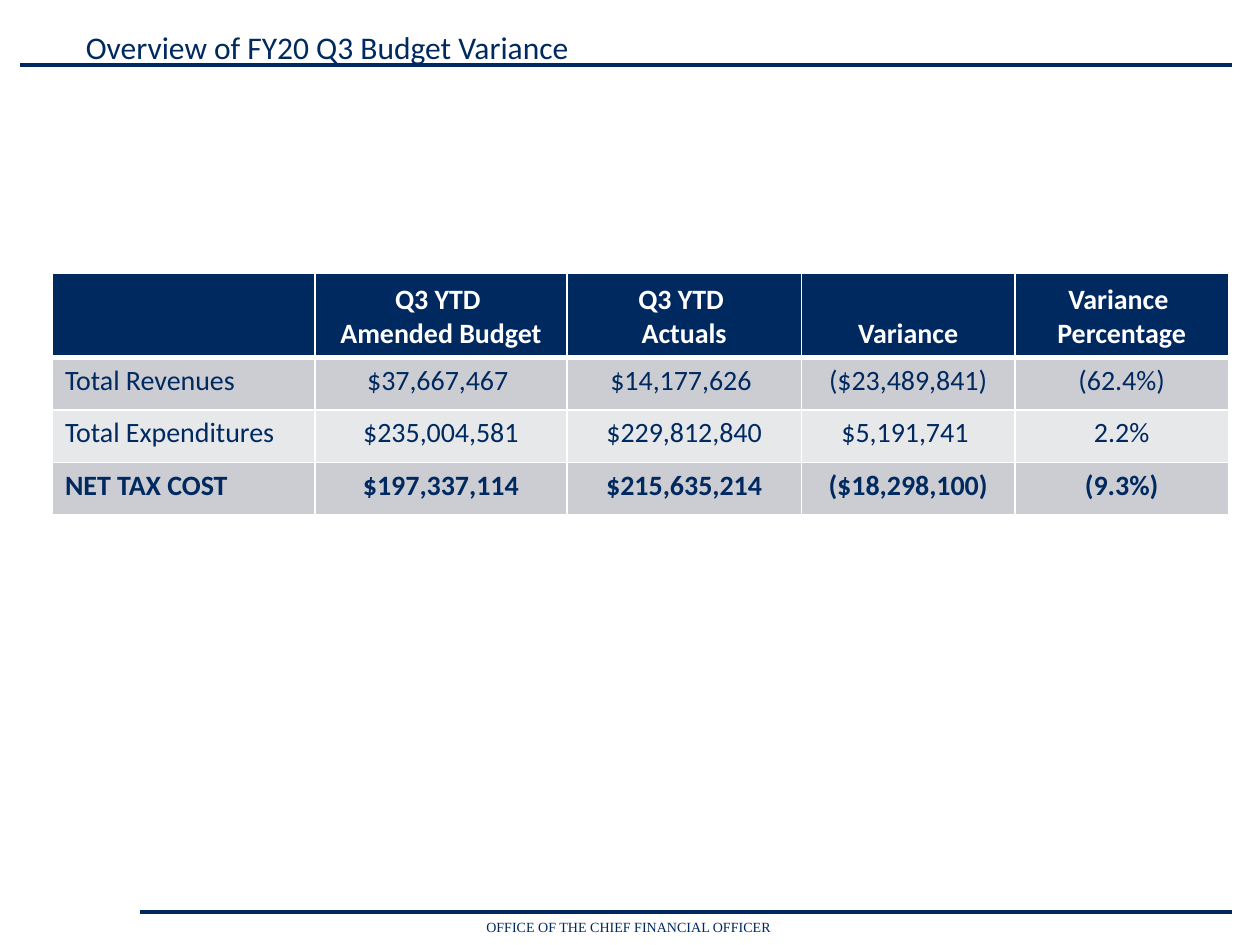
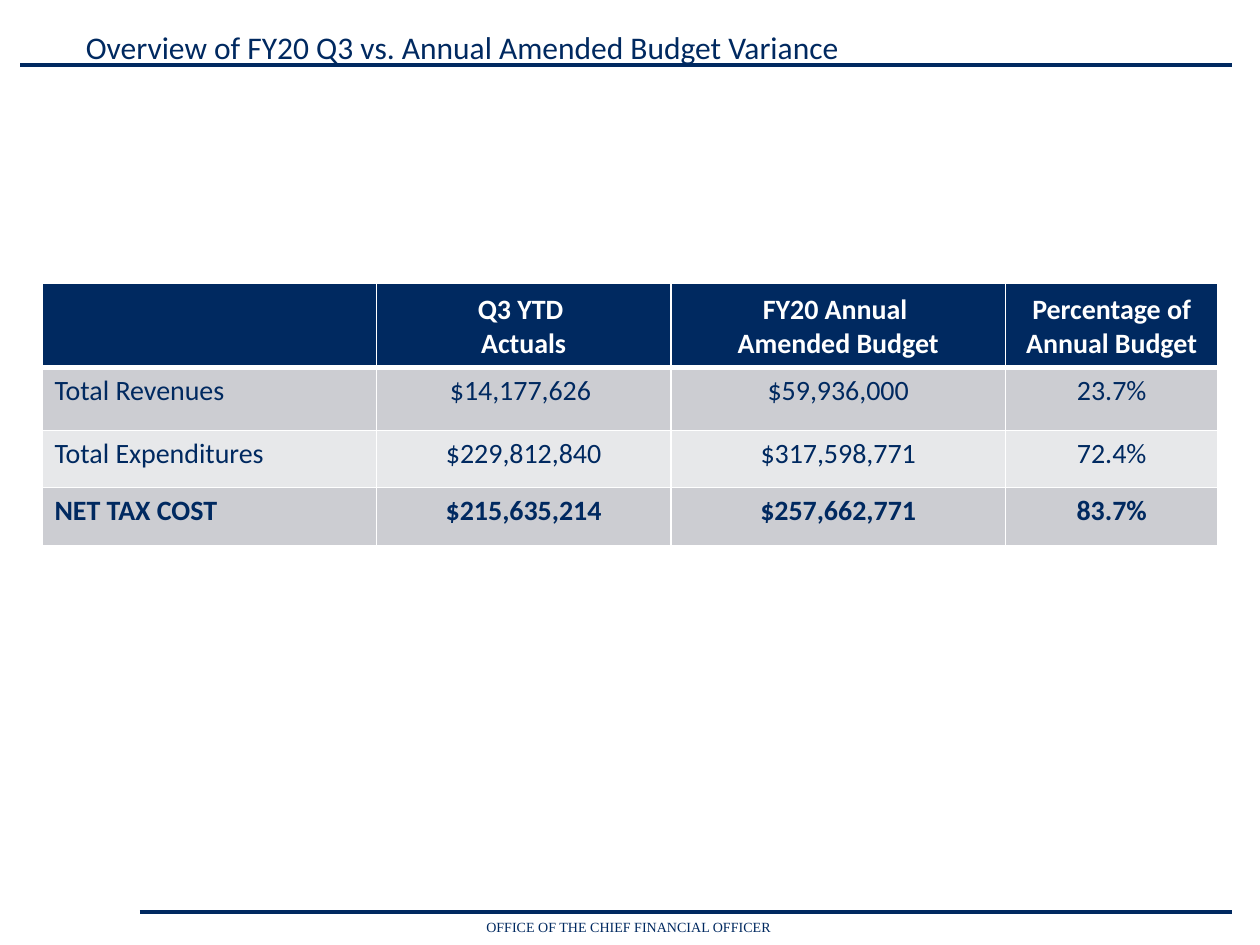
from lxml.etree import SubElement
from pptx import Presentation
from pptx.dml.color import RGBColor
from pptx.enum.shapes import MSO_CONNECTOR
from pptx.enum.text import MSO_ANCHOR, PP_ALIGN
from pptx.oxml.ns import qn
from pptx.util import Pt

NAVY = RGBColor(0x00, 0x29, 0x60)
WHITE = RGBColor(0xFF, 0xFF, 0xFF)
GREY = RGBColor(0xCC, 0xCD, 0xD2)
LIGHT_GREY = RGBColor(0xE7, 0xE8, 0xEA)

BODY_FONT = "Calibri"
FOOTER_FONT = "Times New Roman"


class Deck:
    """Holds the shared style and the slide being built."""

    def __init__(self):
        self.prs = Presentation()
        self.prs.slide_width = Pt(720)
        self.prs.slide_height = Pt(540)
        self.s = None

    def add_slide(self, title, title_width):
        self.s = self.prs.slides.add_slide(self.prs.slide_layouts[6])
        self.rule(11.5, 704, 37.3)
        self.rule(80, 704, 521.3)
        self.text("OFFICE OF THE CHIEF FINANCIAL OFFICER ", 184.3, 521.3, 352, 17,
                  FOOTER_FONT, 8, PP_ALIGN.CENTER)
        self.text(title, 42, 12.4, title_width, 29, BODY_FONT, 18)

    def rule(self, x1, x2, y):
        line = self.s.shapes.add_connector(
            MSO_CONNECTOR.STRAIGHT, Pt(x1), Pt(y), Pt(x2), Pt(y))
        line.line.color.rgb = NAVY
        line.line.width = Pt(2)
        SubElement(line._element.spPr, qn("a:effectLst"))

    def text(self, text, x, y, w, h, font, size, align=PP_ALIGN.LEFT):
        tf = self.s.shapes.add_textbox(Pt(x), Pt(y), Pt(w), Pt(h)).text_frame
        tf.word_wrap = True
        tf.text = text
        self.format(tf, font, size, NAVY, align)

    def format(self, tf, font, size, color, align, bold=False):
        for p in tf.paragraphs:
            p.alignment = align
            for r in p.runs:
                r.font.name = font
                r.font.size = Pt(size)
                r.font.bold = bold
                r.font.color.rgb = color

    def table(self, x, y, widths, heights, rows):
        """Draw a header row, banded body rows and a bold total row."""
        table = self.s.shapes.add_table(
            len(rows), len(widths), Pt(x), Pt(y), Pt(sum(widths)), Pt(sum(heights))).table
        for column, width in zip(table.columns, widths):
            column.width = Pt(width)
        for row, height in zip(table.rows, heights):
            row.height = Pt(height)
        for i, row in enumerate(rows):
            header, total = i == 0, i == len(rows) - 1
            fill = NAVY if header else GREY if i % 2 else LIGHT_GREY
            for j, text in enumerate(row):
                cell = table.cell(i, j)
                self.borders(cell, top=3 if i == 1 else 1, bottom=3 if header else 1)
                cell.fill.solid()
                cell.fill.fore_color.rgb = fill
                cell.vertical_anchor = MSO_ANCHOR.BOTTOM if header else MSO_ANCHOR.TOP
                cell.text_frame.text = text
                self.format(cell.text_frame, BODY_FONT, 16, WHITE if header else NAVY,
                            PP_ALIGN.CENTER if j else PP_ALIGN.LEFT, header or total)

    def borders(self, cell, top, bottom):
        tc_pr = cell._tc.get_or_add_tcPr()
        for side, width in (("L", 1), ("R", 1), ("T", top), ("B", bottom)):
            ln = SubElement(tc_pr, qn(f"a:ln{side}"), w=str(Pt(width)))
            SubElement(SubElement(ln, qn("a:solidFill")), qn("a:srgbClr"), val=str(WHITE))


def main():
    deck = Deck()

    deck.add_slide("Overview of FY20 Q3 Budget Variance", 372)
    deck.table(30, 156.3, [150, 144, 134, 122, 122], [48, 30, 30, 30], [
        ["", "Q3 YTD \nAmended Budget", "Q3 YTD \nActuals", "Variance",
         "Variance \nPercentage"],
        ["Total Revenues", "$37,667,467 ", "$14,177,626 ", "($23,489,841)", "(62.4%)"],
        ["Total Expenditures", "$235,004,581", "$229,812,840", "$5,191,741 ", "2.2%"],
        ["NET TAX COST", "$197,337,114", "$215,635,214", "($18,298,100)", "(9.3%)"],
    ])

    deck.add_slide("Overview of FY20 Q3 vs. Annual Amended Budget Variance", 456)
    deck.table(24, 162, [191, 168.5, 191, 121.5], [48, 36, 32.5, 33.5], [
        ["", "Q3 YTD \nActuals", "FY20 Annual \nAmended Budget",
         "Percentage of Annual Budget"],
        ["Total Revenues", "$14,177,626 ", "$59,936,000", "23.7%"],
        ["Total Expenditures", "$229,812,840", "$317,598,771", "72.4%"],
        ["NET TAX COST", "$215,635,214", "$257,662,771", "83.7%"],
    ])

    deck.prs.save("out.pptx")


if __name__ == "__main__":
    main()
